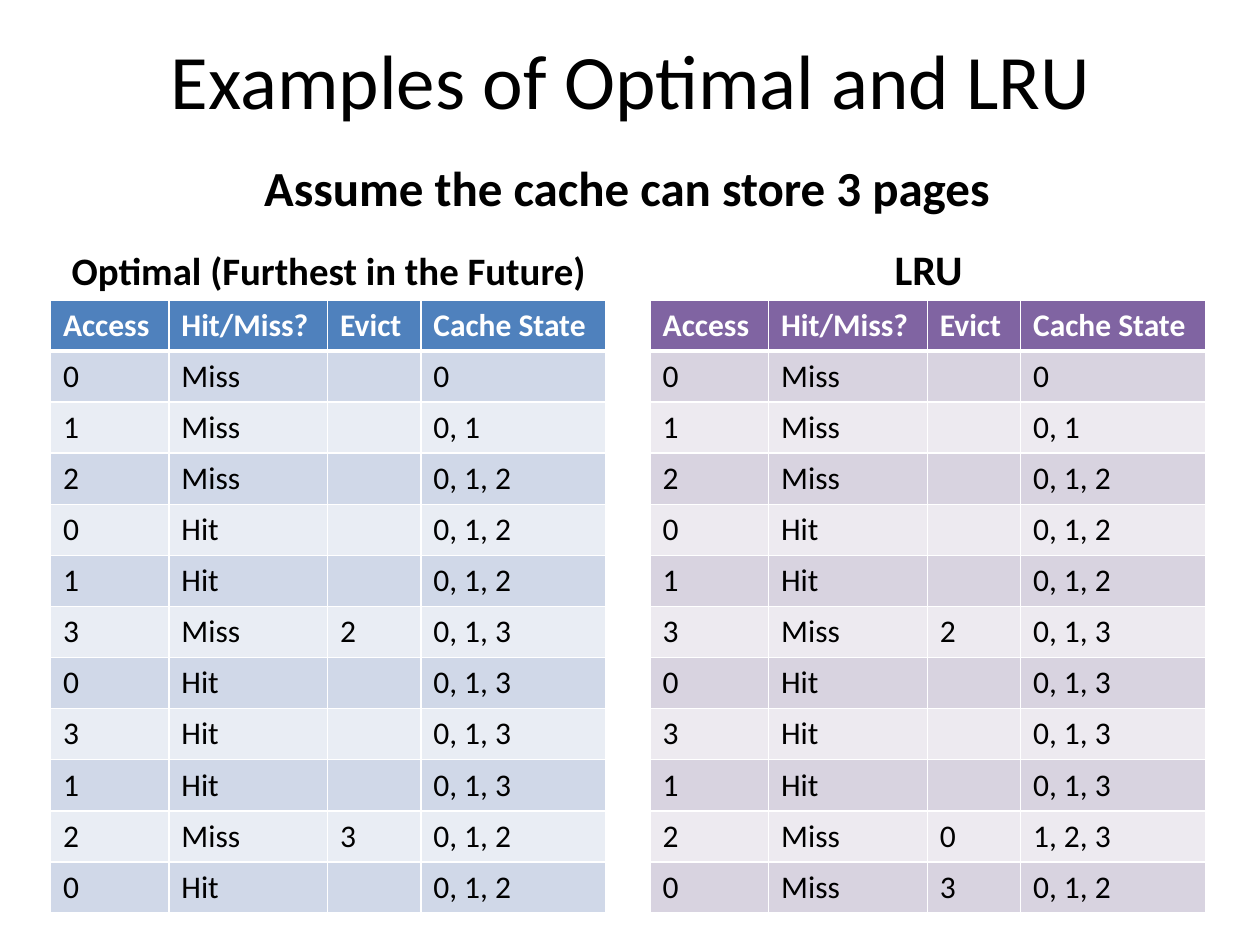
from lxml import etree
from pptx import Presentation, util as u
from pptx.dml.color import RGBColor
from pptx.enum import text
from pptx.oxml import ns

HEADERS = ["Access", "Hit/Miss?", "Evict", "Cache State"]
COLUMN_WIDTHS = [0.94, 1.26, 0.74, 1.47]
TABLE_TOP, TABLE_WIDTH, TABLE_HEIGHT = 2.38, 4.41, 4.87

# Both policies agree on the first nine accesses
shared_steps = [
    ("0", "Miss", "", "0"),
    ("1", "Miss", "", "0, 1"),
    ("2", "Miss", "", "0, 1, 2"),
    ("0", "Hit", "", "0, 1, 2"),
    ("1", "Hit", "", "0, 1, 2"),
    ("3", "Miss", "2", "0, 1, 3"),
    ("0", "Hit", "", "0, 1, 3"),
    ("3", "Hit", "", "0, 1, 3"),
    ("1", "Hit", "", "0, 1, 3"),
]
policies = [
    dict(caption="Optimal (Furthest in the Future)", caption_size=22.2, left=0.4,
         header_fill="4F81BD", bands=["D0D8E8", "E9EDF4"],
         last_steps=[("2", "Miss", "3", "0, 1, 2"), ("0", "Hit", "", "0, 1, 2")]),
    dict(caption="LRU", caption_size=24, left=5.16,
         header_fill="8064A2", bands=["D8D3E0", "EDEAF0"],
         last_steps=[("2", "Miss", "0", "1, 2, 3"), ("0", "Miss", "3", "0, 1, 2")]),
]


def color(hex_value):
    return RGBColor.from_string(hex_value)


def add_heading(words, box, size, bold, anchor):
    frame = slide.shapes.add_textbox(*map(u.Inches, box)).text_frame
    for name, value in dict(word_wrap=True, vertical_anchor=anchor).items():
        setattr(frame, name, value)
    line = frame.paragraphs[0]
    line.text = words
    line.alignment = text.PP_ALIGN.CENTER
    for name, value in dict(name="Calibri", size=u.Pt(size), bold=bold).items():
        setattr(line.font, name, value)
    line.font.color.rgb = color("000000")


deck = Presentation()
deck.slide_width, deck.slide_height = u.Inches(10), u.Inches(7.5)
slide = deck.slides.add_slide(deck.slide_layouts[6])

# Title and assumption
add_heading("Examples of Optimal and LRU", (0.51, 0, 9, 1.25), 44, False,
            text.MSO_ANCHOR.MIDDLE)
add_heading("Assume the cache can store 3 pages", (0.16, 1.2, 9.63, 0.57), 28, True,
            text.MSO_ANCHOR.BOTTOM)

# One captioned trace table per policy
for policy in policies:
    add_heading(policy["caption"], (policy["left"], 1.68, 4.42, 0.7),
                policy["caption_size"], True, text.MSO_ANCHOR.BOTTOM)

    steps = [HEADERS] + shared_steps + policy["last_steps"]
    trace = slide.shapes.add_table(
        len(steps), len(HEADERS), u.Inches(policy["left"]), u.Inches(TABLE_TOP),
        u.Inches(TABLE_WIDTH), u.Inches(TABLE_HEIGHT)).table
    for column, width in zip(trace.columns, COLUMN_WIDTHS):
        column.width = u.Inches(width)

    for row, step in enumerate(steps):
        is_header = row == 0
        band = policy["header_fill"] if is_header else policy["bands"][(row - 1) % 2]
        # The rule under the header is thicker than the rest
        borders = dict(lnL=1, lnR=1, lnT=3 if row == 1 else 1, lnB=3 if is_header else 1)
        for col, entry in enumerate(step):
            cell = trace.cell(row, col)
            cell_properties = cell._tc.get_or_add_tcPr()
            for side, points in borders.items():
                edge = etree.SubElement(cell_properties, ns.qn(f"a:{side}"),
                                        w=str(u.Pt(points)))
                edge_fill = etree.SubElement(edge, ns.qn("a:solidFill"))
                etree.SubElement(edge_fill, ns.qn("a:srgbClr"), val="FFFFFF")
            cell.fill.solid()
            cell.fill.fore_color.rgb = color(band)
            cell.text = entry
            font = cell.text_frame.paragraphs[0].font
            for name, value in dict(name="Calibri", size=u.Pt(18), bold=is_header).items():
                setattr(font, name, value)
            font.color.rgb = color("FFFFFF" if is_header else "000000")

deck.save("out.pptx")
